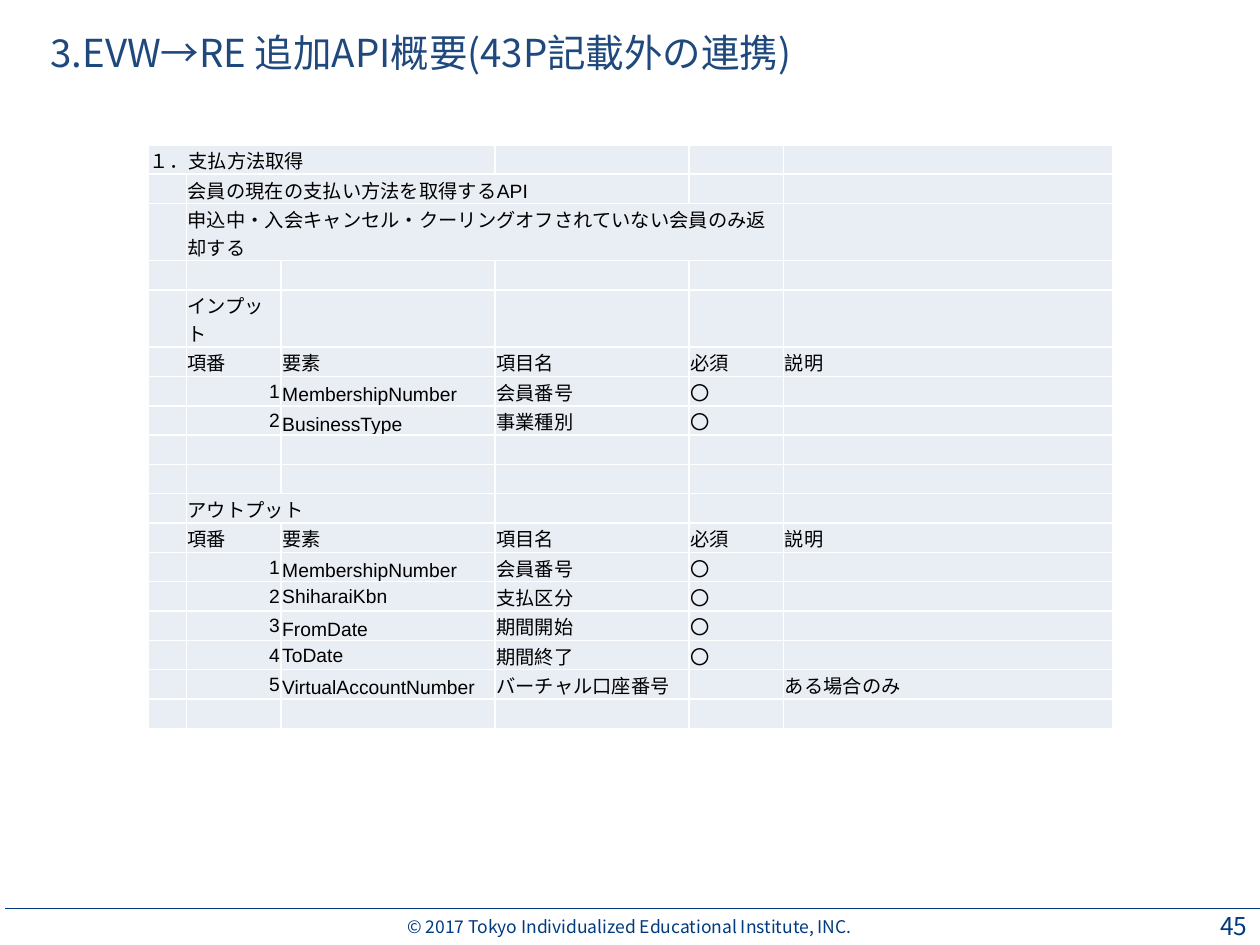
from lxml.etree import SubElement
from pptx import Presentation
from pptx.dml.color import RGBColor
from pptx.enum.shapes import MSO_CONNECTOR as CONN
from pptx.enum.text import MSO_ANCHOR as ANCHOR, MSO_AUTO_SIZE as AUTO, PP_ALIGN as ALIGN
from pptx.oxml.ns import qn
from pptx.util import Inches, Pt

NAVY = RGBColor(0x00, 0x3A, 0x81)
TITLE_BLUE = RGBColor(0x1F, 0x49, 0x7D)
PALE = RGBColor(0xE9, 0xED, 0xF4)
BLACK = RGBColor(0x00, 0x00, 0x00)
SANS = "Noto Sans CJK JP"
ARIAL = "Arial"

COLS = [0.3, 0.75, 1.7, 1.54, 0.75, 2.61]
HEAD = ["", "項番", "要素", "項目名", "必須", "説明"]
MEMBER = ["", "1", "MembershipNumber", "会員番号", "〇"]
ROWS = [
    ["１．支払方法取得"],
    ["", "会員の現在の支払い方法を取得するAPI"],
    ["", "申込中・入会キャンセル・クーリングオフされていない会員のみ返却する"],
    [],
    ["", "インプット"],
    HEAD,
    MEMBER,
    ["", "2", "BusinessType", "事業種別", "〇"],
    [],
    [],
    ["", "アウトプット"],
    HEAD,
    MEMBER,
    ["", "2", "ShiharaiKbn", "支払区分", "〇"],
    ["", "3", "FromDate", "期間開始", "〇"],
    ["", "4", "ToDate", "期間終了", "〇"],
    ["", "5", "VirtualAccountNumber", "バーチャル口座番号", "", "ある場合のみ"],
    [],
]
ROW_H = 4.19 / len(ROWS)
SPANS = [(0, 0, 2), (1, 1, 3), (2, 1, 4), (10, 1, 2)]
BOTTOM_TEXT = {"MembershipNumber", "BusinessType", "FromDate",
               "VirtualAccountNumber", "会員番号", "事業種別"}


def set_text(tf, text, size, font, color, align=ALIGN.LEFT):
    p = tf.paragraphs[0]
    p.text = text
    p.alignment = align
    for r in p.runs:
        r.font.size = Pt(size)
        r.font.name = font
        r.font.color.rgb = color
        SubElement(r.font._element, qn("a:ea"), typeface=SANS)
    if not text:
        SubElement(p._p, qn("a:endParaRPr"), sz=str(size * 100))


def add_title(s, box):
    sp = s.shapes.title
    sp.left, sp.top, sp.width, sp.height = map(Inches, box)
    tf = sp.text_frame
    tf.auto_size = AUTO.NONE
    tf.word_wrap = False
    tf.vertical_anchor = ANCHOR.MIDDLE
    set_text(tf, "3.EVW→RE 追加API概要(43P記載外の連携)", 22, SANS, TITLE_BLUE)


def add_borders(cell):
    pr = cell._tc.get_or_add_tcPr()
    for side in ("lnL", "lnR", "lnT", "lnB"):
        ln = SubElement(pr, qn("a:" + side), w=str(Pt(1)))
        fill = SubElement(ln, qn("a:solidFill"))
        SubElement(fill, qn("a:srgbClr"), val="FFFFFF")


def format_cell(cell, text):
    cell.margin_left = cell.margin_right = cell.margin_top = Inches(0.01)
    cell.margin_bottom = 0
    cell.vertical_anchor = ANCHOR.BOTTOM if text in BOTTOM_TEXT else ANCHOR.MIDDLE
    align = ALIGN.RIGHT if text.isdigit() else ALIGN.LEFT
    set_text(cell.text_frame, text, 11, ARIAL, BLACK, align)
    add_borders(cell)
    cell.fill.solid()
    cell.fill.fore_color.rgb = PALE


def add_api_table(s, left, top):
    table = s.shapes.add_table(
        len(ROWS), len(COLS), Inches(left), Inches(top),
        Inches(sum(COLS)), Inches(ROW_H * len(ROWS))).table
    table.first_row = table.horz_banding = False
    for col, width in zip(table.columns, COLS):
        col.width = Inches(width)
    for i, values in enumerate(ROWS):
        table.rows[i].height = Inches(ROW_H)
        for j in range(len(COLS)):
            format_cell(table.cell(i, j), values[j] if j < len(values) else "")
    for row, first, last in SPANS:
        table.cell(row, first).merge(table.cell(row, last))


def add_footer_text(s, box, text, size, align):
    tf = s.shapes.add_textbox(*map(Inches, box)).text_frame
    tf.word_wrap = True
    tf.margin_top = tf.margin_bottom = 0
    tf.vertical_anchor = ANCHOR.MIDDLE
    set_text(tf, text, size, SANS, NAVY, align)


def add_footer(s, top, height):
    line = s.shapes.add_connector(
        CONN.STRAIGHT, Inches(0.04), Inches(top), Inches(10.01), Inches(top))
    line.line.color.rgb = NAVY
    line.line.width = Pt(1)
    SubElement(line._element.spPr, qn("a:effectLst"))
    add_footer_text(s, (1.76, top, 6.47, height),
                    "© 2017 Tokyo Individualized Educational Institute, INC.",
                    10, ALIGN.CENTER)
    add_footer_text(s, (9.41, top, 0.59, height), "45", 14, ALIGN.RIGHT)


def main():
    prs = Presentation()
    prs.slide_width, prs.slide_height = Inches(10), Inches(7.5)
    s = prs.slides.add_slide(prs.slide_layouts[5])
    add_title(s, (0.3, 0.11, 7.81, 0.6))
    add_api_table(s, 1.18, 1.15)
    add_footer(s, 7.21, 0.28)
    prs.save("out.pptx")


if __name__ == "__main__":
    main()
